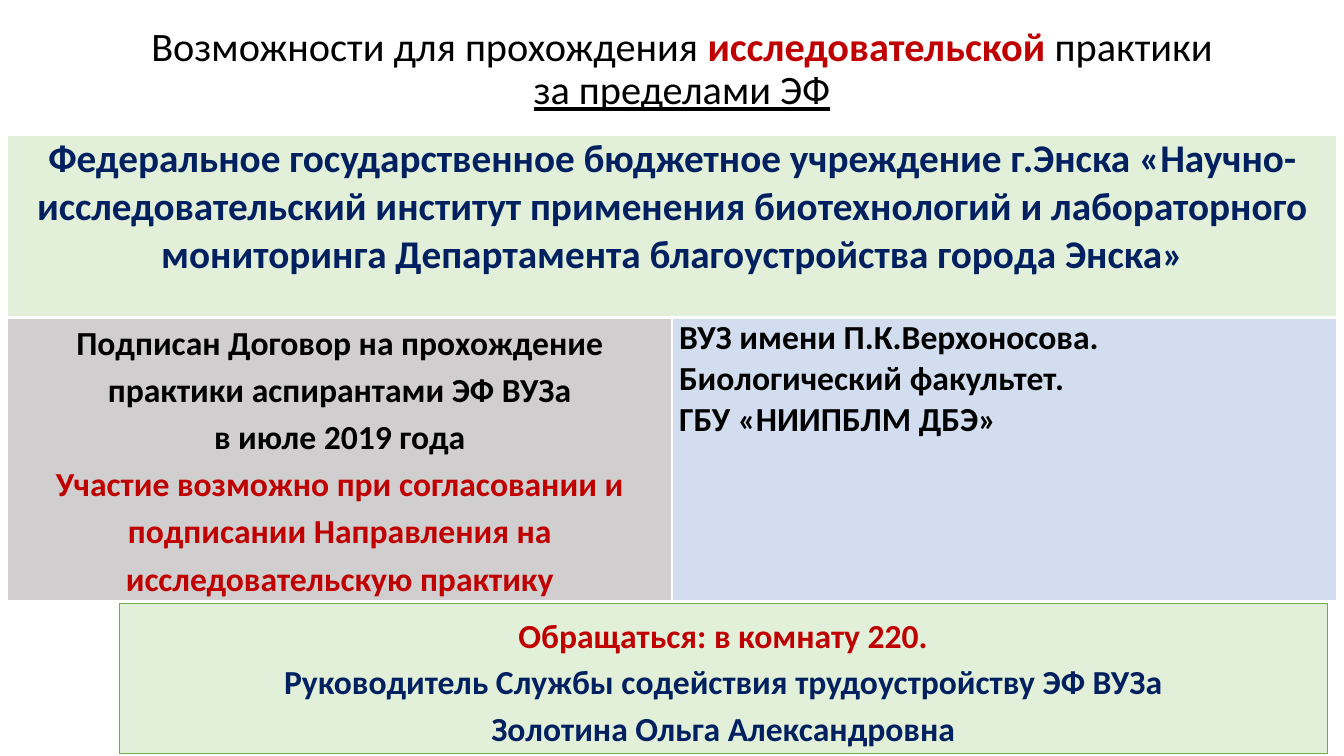
import dataclasses

import lxml.etree
import pptx
import pptx.dml.color
import pptx.enum.shapes
import pptx.enum.text
import pptx.util

FONT = "Calibri"
BLACK, WHITE, RED, NAVY = "000000", "FFFFFF", "C00000", "002060"
MINT, GREY, BLUE, GREEN = "E2F0D9", "D0CECE", "D2DEEF", "70AD47"
CENTER = pptx.enum.text.PP_ALIGN.CENTER
LEFT = pptx.enum.text.PP_ALIGN.LEFT
MIDDLE = pptx.enum.text.MSO_ANCHOR.MIDDLE

# The slide is a grid of 160 columns by 90 rows
WIDTH, HEIGHT = pptx.util.Inches(13.33), pptx.util.Inches(7.5)
COLS, ROWS = 160, 90


@dataclasses.dataclass
class Box:
    left: float
    top: float
    width: float
    height: float


@dataclasses.dataclass
class Line:
    text: str
    color: str = BLACK


@dataclasses.dataclass
class Cell:
    row: int
    col: int
    fill: str
    lines: list[Line]
    size: float = 24
    space: float = 1.0
    align: int = CENTER


TITLE = Box(5.2, 4.8, 152, 12.7)
TABLE = Box(0.9, 16.1, 158.2, 55.3)
PANEL = Box(14.2, 71.8, 143.8, 17.9)
HEAD = 21.7  # height of the first table row

CELLS = [
    Cell(0, 0, MINT, [Line(
        "Федеральное государственное бюджетное учреждение г.Энска "
        "«Научно-исследовательский институт применения биотехнологий и "
        "лабораторного мониторинга Департамента благоустройства города Энска»",
        NAVY)], size=28),
    Cell(1, 0, GREY, [
        Line("Подписан Договор на прохождение практики аспирантами ЭФ ВУЗа"),
        Line("в июле 2019 года"),
        Line("Участие возможно при согласовании и подписании Направления "
             "на исследовательскую практику", RED)], space=1.15),
    Cell(1, 1, BLUE, [
        Line("ВУЗ имени П.К.Верхоносова."),
        Line("Биологический факультет."),
        Line("ГБУ «НИИПБЛМ ДБЭ»")], align=LEFT),
]

CONTACT = [
    Line("Обращаться: в комнату 220.", RED),
    Line("Руководитель Службы содействия трудоустройству ЭФ ВУЗа", NAVY),
    Line("Золотина Ольга Александровна", NAVY),
]


def across(cols: float) -> int:
    return round(WIDTH * cols / COLS)


def down(rows: float) -> int:
    return round(HEIGHT * rows / ROWS)


def place(box: Box) -> tuple[int, int, int, int]:
    return across(box.left), down(box.top), across(box.width), down(box.height)


def paint(target, color: str) -> None:
    """Give a fill or a font one plain colour."""
    if hasattr(target, "solid"):
        target.solid()
        target.fore_color.rgb = pptx.dml.color.RGBColor.from_string(color)
    else:
        target.color.rgb = pptx.dml.color.RGBColor.from_string(color)


def style(run, size: float, color: str, bold: bool) -> None:
    run.font.name = FONT
    run.font.size = pptx.util.Pt(size)
    run.font.bold = bold
    paint(run.font, color)


def write(frame, lines: list[Line], size: float, space: float, align: int) -> None:
    frame.word_wrap = True
    frame.text = "\n".join(line.text for line in lines)
    for para, line in zip(frame.paragraphs, lines):
        para.alignment = align
        para.line_spacing = space
        style(para.runs[0], size, line.color, True)


def border(cell, widths: dict[str, float]) -> None:
    """Draw white cell borders, given in points for each side."""
    props = cell._tc.get_or_add_tcPr()
    space = "{http://schemas.openxmlformats.org/drawingml/2006/main}"
    for side, width in widths.items():
        edge = lxml.etree.SubElement(props, f"{space}ln{side}", w=str(pptx.util.Pt(width)))
        fill = lxml.etree.SubElement(edge, f"{space}solidFill")
        lxml.etree.SubElement(fill, f"{space}srgbClr", val=WHITE)


def add_title(slide) -> None:
    title = slide.shapes.title
    title.left, title.top, title.width, title.height = place(TITLE)
    frame = title.text_frame
    frame.word_wrap = True
    frame.auto_size = pptx.enum.text.MSO_AUTO_SIZE.NONE
    frame.vertical_anchor = MIDDLE
    frame.margin_top, frame.margin_bottom = down(0.4), down(6)
    para = frame.paragraphs[0]
    para.text = "Возможности для прохождения "
    para.add_run().text = "исследовательской "
    para.add_run().text = "практики"
    para.add_line_break()
    para.add_run().text = "за пределами ЭФ"
    para.alignment = CENTER
    para.line_spacing = 0.9
    for run in para.runs:
        style(run, 28.8, BLACK, False)
    key, last = para.runs[1], para.runs[-1]
    style(key, 28.8, RED, True)
    last.font.underline = True


def add_table(slide) -> None:
    table = slide.shapes.add_table(2, 2, *place(TABLE)).table
    table.first_row = table.horz_banding = False
    for col in table.columns:
        col.width = across(TABLE.width / 2)
    for row, height in zip(table.rows, (HEAD, TABLE.height - HEAD)):
        row.height = down(height)
    table.cell(0, 0).merge(table.cell(0, 1))
    for item in CELLS:
        cell = table.cell(item.row, item.col)
        cell.margin_left = cell.margin_right = across(0.85)
        cell.margin_top = cell.margin_bottom = 0
        first = item.row == 0
        border(cell, {"L": 1, "R": 1, "T": 1 if first else 3, "B": 3 if first else 1})
        paint(cell.fill, item.fill)
        write(cell.text_frame, item.lines, item.size, item.space, item.align)


def add_panel(slide) -> None:
    kind = pptx.enum.shapes.MSO_SHAPE.RECTANGLE
    panel = slide.shapes.add_shape(kind, *place(PANEL))
    panel.shadow.inherit = False
    paint(panel.fill, MINT)
    paint(panel.line.fill, GREEN)
    panel.line.width = pptx.util.Pt(0.5)
    write(panel.text_frame, CONTACT, 24, 1.15, CENTER)


def main() -> None:
    deck = pptx.Presentation()
    deck.slide_width, deck.slide_height = WIDTH, HEIGHT
    slide = deck.slides.add_slide(deck.slide_layouts[5])
    # Heading, practice table and contact panel
    add_title(slide)
    add_table(slide)
    add_panel(slide)
    deck.save("out.pptx")


if __name__ == "__main__":
    main()
